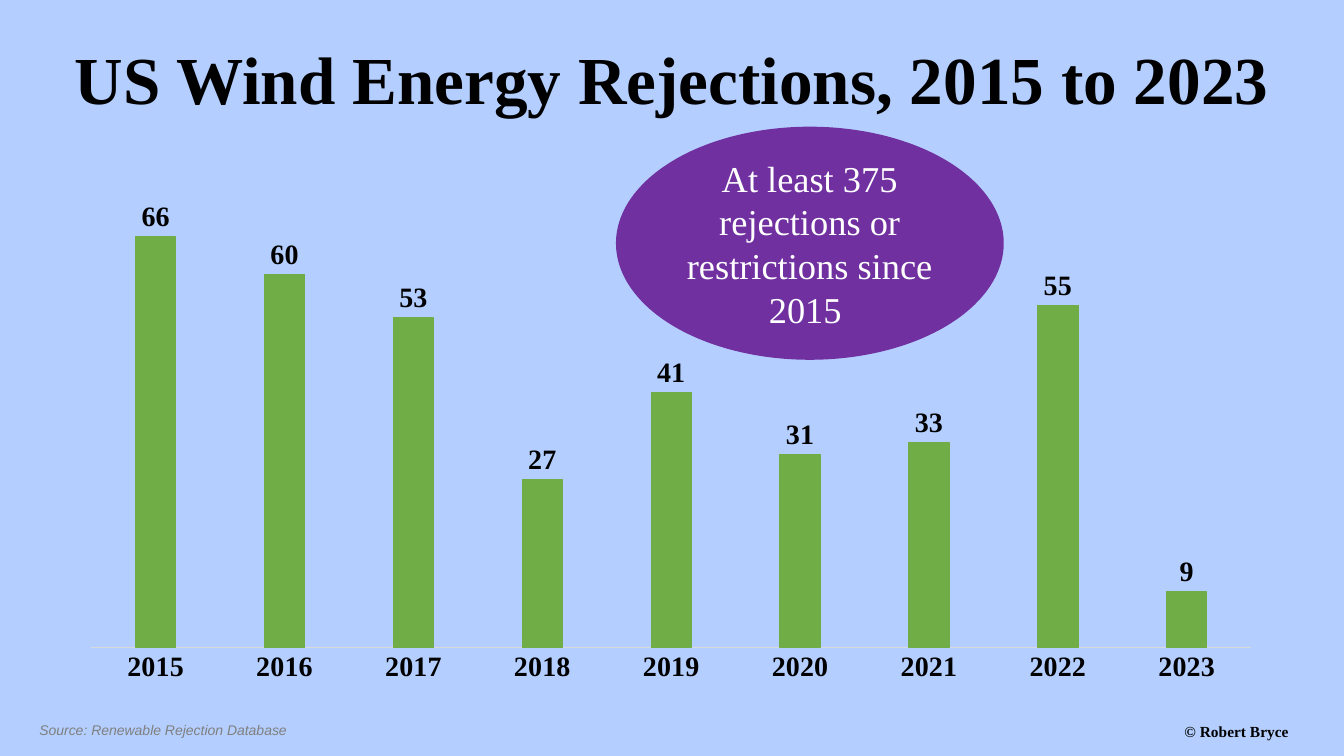
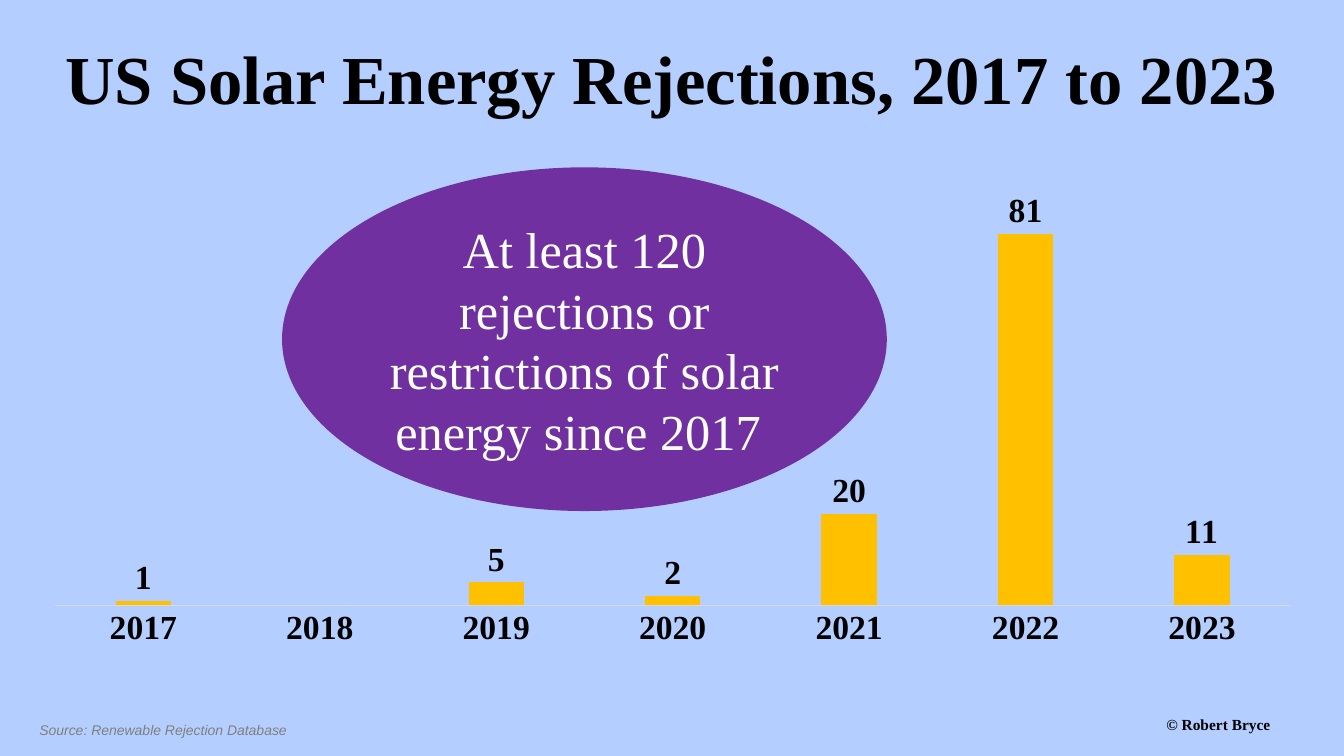
from lxml import etree
from pptx import Presentation
from pptx.chart import data
from pptx.dml.color import RGBColor
from pptx.enum import chart as charts, shapes, text
from pptx.oxml import ns
from pptx.util import Pt

SKY = RGBColor(0xB4, 0xCF, 0xFF)
PURPLE = RGBColor(0x70, 0x30, 0xA0)
GREEN = RGBColor(0x70, 0xAD, 0x47)
GOLD = RGBColor(0xFF, 0xC0, 0x00)
GREY = RGBColor(0x7F, 0x7F, 0x7F)
AXIS_GREY = RGBColor(0xD9, 0xD9, 0xD9)
BLACK = RGBColor(0, 0, 0)
WHITE = RGBColor(0xFF, 0xFF, 0xFF)

SERIF = "Times New Roman"
TITLE = {"name": SERIF, "bold": True, "color": BLACK}
SOURCE = {"name": "Arial", "size": Pt(10), "italic": True, "color": GREY}
COPYRIGHT = {"name": SERIF, "size": Pt(11), "bold": True, "color": BLACK}
CALLOUT = {"name": SERIF, "color": WHITE}
CHART = {"name": "Calibri", "size": Pt(10), "color": BLACK}
LABEL = {"name": SERIF, "bold": True, "color": BLACK}

# Each slide: wording, values and places (left, top, width, height in points)
SLIDES = [
    {
        "title": "US Wind Energy Rejections, 2015 to 2023",
        "title_at": (30, 22, 900, 66), "title_size": 48,
        "callout": "At least 375 rejections or restrictions since 2015 ",
        "callout_at": (440, 90.5, 277, 166.5), "callout_size": 26,
        "copyright_at": (839, 512.5, 114, 25),
        "chart_at": (48, 144, 863, 351), "label_size": 20,
        "first_year": 2015, "values": [66, 60, 53, 27, 41, 31, 33, 55, 9],
        "maximum": 70, "bar": GREEN, "outlined": True,
    },
    {
        "title": "US Solar Energy Rejections, 2017 to 2023",
        "title_at": (35, 21, 889, 67), "title_size": 49,
        "callout": "At least 120 rejections or restrictions of solar energy since 2017 ",
        "callout_at": (201.5, 119.5, 432, 245.5), "callout_size": 36,
        "copyright_at": (826, 507, 114, 25),
        "chart_at": (21, 131, 919, 338), "label_size": 24,
        "first_year": 2017, "values": [1, None, 5, 2, 20, 81, 11],
        "maximum": 90, "bar": GOLD, "outlined": False,
    },
]


def set_font(font, style, **extra):
    for key, value in {**style, **extra}.items():
        if key == "color":
            font.color.rgb = value
        else:
            setattr(font, key, value)


def add_text(page, words, place, style, **extra):
    box = page.shapes.add_textbox(*map(Pt, place))
    box.text_frame.word_wrap = True
    para = box.text_frame.paragraphs[0]
    span = para.add_run()
    span.text = words
    set_font(span.font, style, **extra)
    return box


deck = Presentation()
deck.slide_width, deck.slide_height = Pt(960), Pt(540)

for item in SLIDES:
    page = deck.slides.add_slide(deck.slide_layouts[6])
    page.background.fill.solid()
    page.background.fill.fore_color.rgb = SKY

    # Footer
    add_text(page, "Source: Renewable Rejection Database", (21, 512, 314, 20), SOURCE)
    add_text(page, "© Robert Bryce", item["copyright_at"], COPYRIGHT)

    # Callout
    oval = page.shapes.add_shape(shapes.MSO_SHAPE.OVAL, *map(Pt, item["callout_at"]))
    oval.shadow.inherit = False
    oval.fill.solid()
    oval.fill.fore_color.rgb = PURPLE
    oval.line.fill.background()
    oval.text_frame.word_wrap = True
    oval.text_frame.vertical_anchor = text.MSO_ANCHOR.MIDDLE
    para = oval.text_frame.paragraphs[0]
    para.alignment = text.PP_ALIGN.CENTER
    span = para.add_run()
    span.text = item["callout"]
    set_font(span.font, CALLOUT, size=Pt(item["callout_size"]))

    # Title
    title = add_text(page, item["title"], item["title_at"], TITLE,
                     size=Pt(item["title_size"]))
    title.text_frame.word_wrap = False
    title.text_frame.vertical_anchor = text.MSO_ANCHOR.BOTTOM
    title.text_frame.paragraphs[0].alignment = text.PP_ALIGN.CENTER

    # Column chart
    table = data.CategoryChartData()
    table.categories = [str(item["first_year"] + i) for i in range(len(item["values"]))]
    table.add_series("Series 1", item["values"])
    chart = page.shapes.add_chart(charts.XL_CHART_TYPE.COLUMN_CLUSTERED,
                                  *map(Pt, item["chart_at"]), table).chart
    chart.has_legend = False
    chart.has_title = False
    set_font(chart.font, CHART)

    # Transparent chart area
    area = etree.Element(ns.qn("c:spPr"))
    etree.SubElement(area, ns.qn("a:noFill"))
    border = etree.SubElement(area, ns.qn("a:ln"))
    etree.SubElement(border, ns.qn("a:noFill"))
    chart.element.find(ns.qn("c:chart")).addnext(area)

    # Axes
    years = chart.category_axis
    years.major_tick_mark = charts.XL_TICK_MARK.NONE
    years.format.line.color.rgb = AXIS_GREY
    years.format.line.width = Pt(0.75)
    set_font(years.tick_labels.font, LABEL, size=Pt(item["label_size"]))
    counts = chart.value_axis
    counts.visible = False
    counts.has_major_gridlines = False
    counts.minimum_scale, counts.maximum_scale = 0, item["maximum"]

    # Bars and their labels
    plot = chart.plots[0]
    plot.gap_width, plot.overlap, plot.vary_by_categories = 219, -27, False
    series = plot.series[0]
    series.format.fill.solid()
    series.format.fill.fore_color.rgb = item["bar"]
    if item["outlined"]:
        series.format.line.color.rgb = item["bar"]
        series.format.line.width = Pt(0.75)
    labels = series.data_labels
    labels.show_value = True
    labels.position = charts.XL_LABEL_POSITION.OUTSIDE_END
    set_font(labels.font, LABEL, size=Pt(item["label_size"]))

deck.save("out.pptx")
